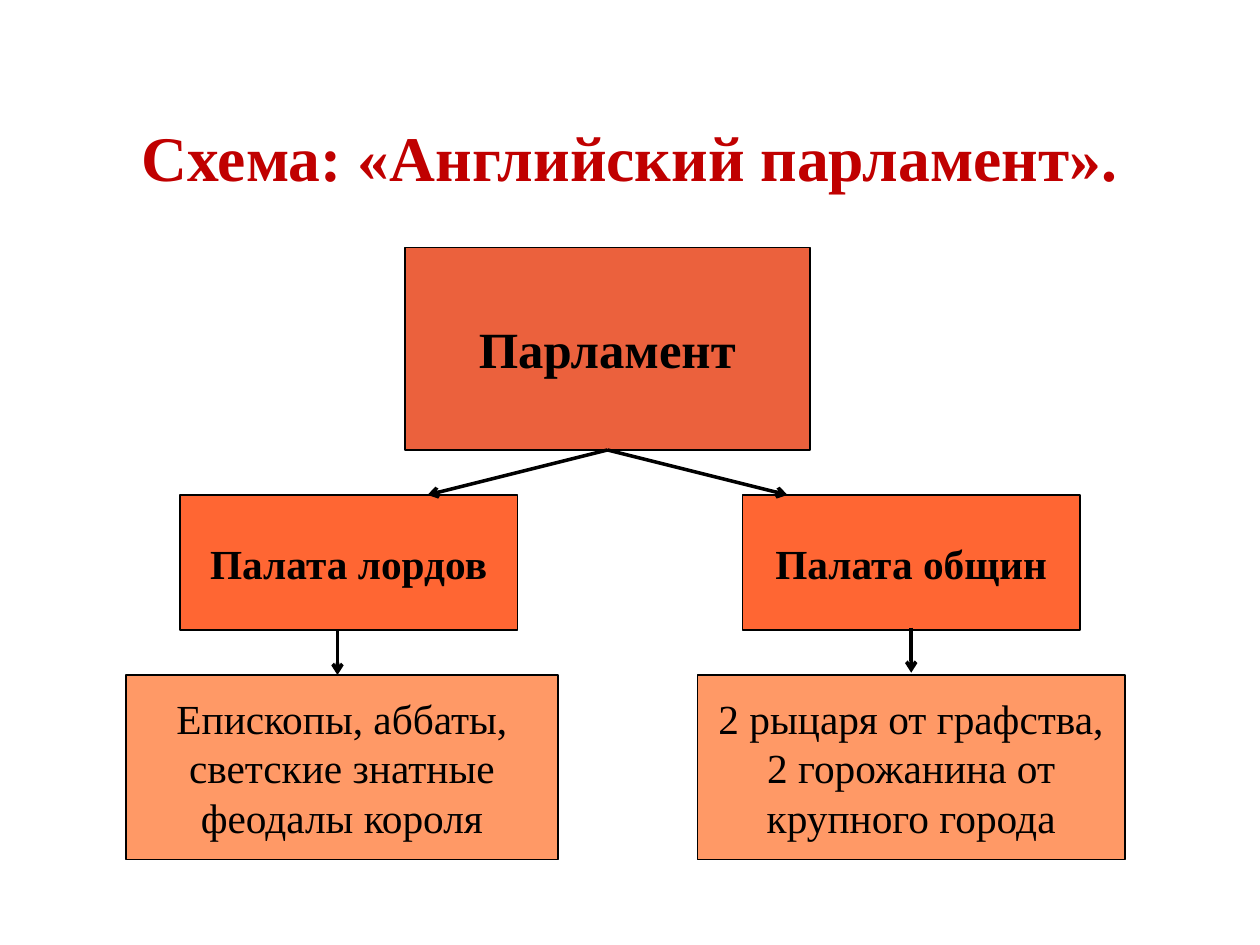
from lxml import etree
from pptx import Presentation
from pptx.dml.color import RGBColor
from pptx.enum.shapes import MSO_CONNECTOR, MSO_SHAPE
from pptx.enum.text import MSO_ANCHOR, PP_ALIGN
from pptx.oxml.ns import qn
from pptx.util import Inches, Pt

RECTANGLE = MSO_SHAPE.RECTANGLE
STRAIGHT = MSO_CONNECTOR.STRAIGHT
MIDDLE = MSO_ANCHOR.MIDDLE
CENTER = PP_ALIGN.CENTER

COLORS = {
    "title": "C00000",
    "parliament": "EB613D",
    "chamber": "FF6633",
    "members": "FF9966",
    "ink": "000000",
}
FONT = "Times New Roman"
WIDTH, HEIGHT = Inches(10), Inches(7.5)
COLUMNS = 28
BOX_FRAME = {
    "word_wrap": False,
    "vertical_anchor": MIDDLE,
    "margin_left": Inches(0.09),
    "margin_right": Inches(0.09),
    "margin_top": Inches(0.04),
    "margin_bottom": Inches(0.04),
}

BOXES = [
    ((9, 5.5, 9, 4.5), "parliament", 29, True, ["Парламент"]),
    ((4, 11, 7.5, 3), "chamber", 23.6, True, ["Палата лордов"]),
    ((2.8, 15, 9.6, 4.1), "members", 23.6, False,
     ["Епископы, аббаты,", "светские знатные", "феодалы короля"]),
    ((16.5, 11, 7.5, 3), "chamber", 23.6, True, ["Палата общин"]),
    ((15.5, 15, 9.5, 4.1), "members", 23.6, False,
     ["2 рыцаря от графства,", "2 горожанина от", "крупного города"]),
]
ARROWS = [
    (13.5, 10, 9.5, 11),
    (13.5, 10, 17.5, 11),
    (7.5, 14, 7.5, 15),
    (20.25, 13.95, 20.25, 14.95),
]


def grid(*units):
    return [round(unit * WIDTH / COLUMNS) for unit in units]


def set_all(target, values):
    for name, value in values.items():
        setattr(target, name, value)


def write_lines(frame, lines, size, bold, color):
    for index, line in enumerate(lines):
        paragraph = frame.add_paragraph() if index else frame.paragraphs[0]
        paragraph.alignment = CENTER
        run = paragraph.add_run()
        run.text = line
        set_all(run.font, {"name": FONT, "size": Pt(size), "bold": bold})
        run.font.color.rgb = RGBColor.from_string(COLORS[color])


def draw_outline(line):
    line.color.rgb = RGBColor.from_string(COLORS["ink"])
    line.width = Pt(0)


def add_title(slide, text):
    title = slide.shapes.title
    set_all(title, {
        "left": round(WIDTH * 0.05),
        "top": round(HEIGHT * 0.12),
        "width": round(WIDTH * 0.9),
        "height": round(HEIGHT * 0.09),
    })
    title.text_frame.vertical_anchor = MIDDLE
    write_lines(title.text_frame, [text], 36.3, True, "title")


def add_box(slide, cell, color, size, bold, lines):
    shape = slide.shapes.add_shape(RECTANGLE, *grid(*cell))
    shape.shadow.inherit = False
    shape.fill.solid()
    shape.fill.fore_color.rgb = RGBColor.from_string(COLORS[color])
    draw_outline(shape.line)
    set_all(shape.text_frame, BOX_FRAME)
    write_lines(shape.text_frame, lines, size, bold, "ink")


def add_arrow(slide, ends):
    connector = slide.shapes.add_connector(STRAIGHT, *grid(*ends))
    draw_outline(connector.line)
    outline = connector.line._get_or_add_ln()
    etree.SubElement(outline, qn("a:tailEnd"), type="arrow")
    etree.SubElement(connector._element.spPr, qn("a:effectLst"))


def main():
    presentation = Presentation()
    presentation.slide_width, presentation.slide_height = WIDTH, HEIGHT
    slide = presentation.slides.add_slide(presentation.slide_layouts[5])
    add_title(slide, "Схема: «Английский парламент».")
    for box in BOXES:
        add_box(slide, *box)
    for ends in ARROWS:
        add_arrow(slide, ends)
    presentation.save("out.pptx")


if __name__ == "__main__":
    main()
